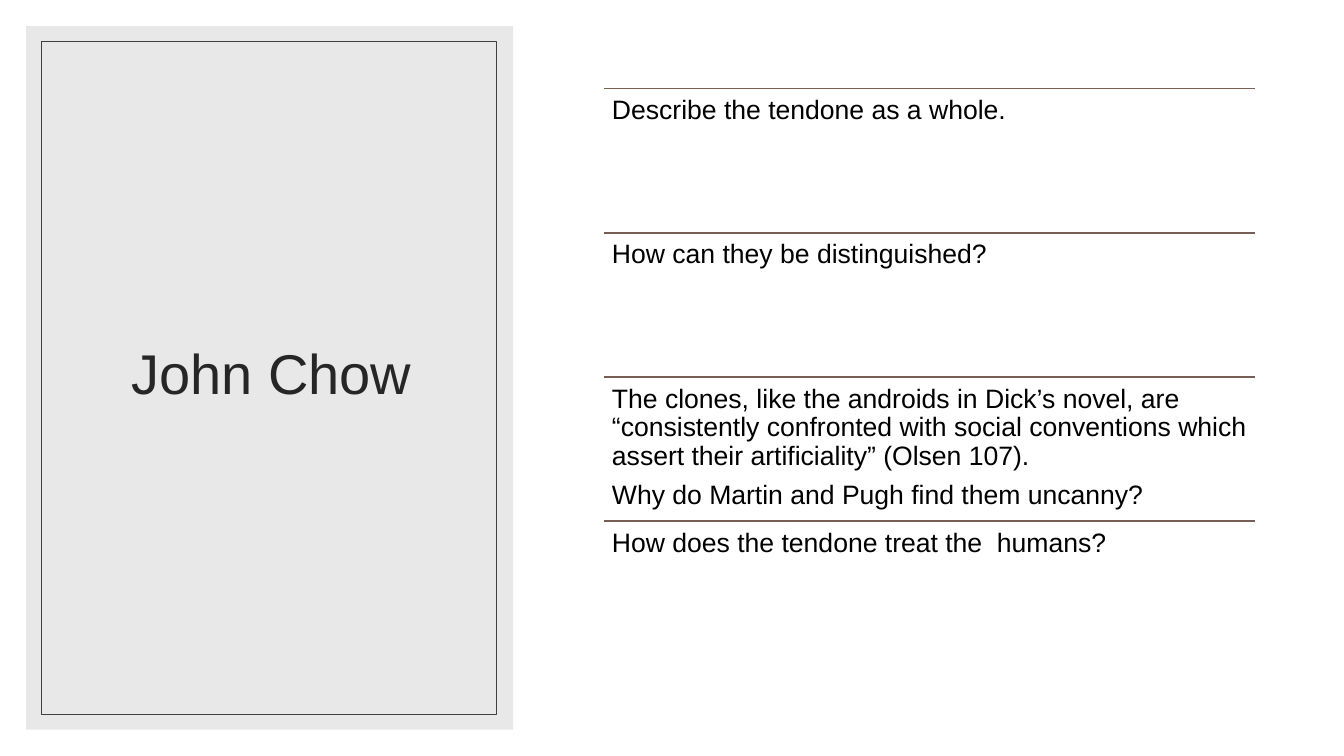
from dataclasses import dataclass

from lxml import etree
from pptx import Presentation
from pptx import util as u
from pptx.dml.color import RGBColor
from pptx.enum import shapes, text
from pptx.oxml import ns

PX = 9144  # EMU per px, 100 px to the inch
FONT = "Arial"
COLORS = {
    "background": "FFFFFF",
    "panel": "D9D9D9",
    "frame": "404040",
    "title": "262626",
    "rule": "775F55",
    "body": "000000",
}


@dataclass
class Box:
    left: int
    top: int
    width: int
    height: int

    def emu(self) -> tuple[int, ...]:
        return tuple(v * PX for v in (self.left, self.top, self.width, self.height))


PANEL = Box(26, 26, 483, 698)
FRAME = Box(41, 41, 451, 668)
TITLE = Box(63, 61, 412, 624)
FIRST_QUESTION = Box(599, 88, 646, 143)
INSET = 8

QUESTIONS = [
    ["Describe the tendone as a whole."],
    ["How can they be distinguished?"],
    [
        "The clones, like the androids in Dick’s novel, are “consistently confronted "
        "with social conventions which assert their artificiality” (Olsen 107).",
        "Why do Martin and Pugh find them uncanny?",
    ],
    ["How does the tendone treat the  humans?"],
]


def color(name: str) -> RGBColor:
    return RGBColor.from_string(COLORS[name])


def add_rect(s, box: Box):
    sp = s.shapes.add_shape(shapes.MSO_SHAPE.RECTANGLE, *box.emu())
    sp.shadow.inherit = False
    return sp


def format_paragraph(p, size: int, color_name: str) -> None:
    p.line_spacing = 0.9
    for r in p.runs:
        r.font.name = FONT
        r.font.size = u.Pt(size)
        r.font.color.rgb = color(color_name)


def add_panel(s):
    sp = add_rect(s, PANEL)
    sp.fill.solid()
    sp.fill.fore_color.rgb = color("panel")
    sp.line.fill.background()
    fill_color = sp.element.spPr.find(ns.qn("a:solidFill"))[0]
    etree.SubElement(fill_color, ns.qn("a:alpha"), val="60000")
    return sp


def add_frame(s) -> None:
    sp = add_rect(s, FRAME)
    sp.fill.background()
    sp.line.color.rgb = color("frame")
    sp.line.width = u.Pt(0.5)


def set_title(s, words: str):
    sp = s.shapes.title
    sp.left, sp.top, sp.width, sp.height = TITLE.emu()
    tf = sp.text_frame
    tf.text = words
    tf.word_wrap = True
    tf.auto_size = text.MSO_AUTO_SIZE.NONE
    tf.vertical_anchor = text.MSO_ANCHOR.MIDDLE
    p = tf.paragraphs[0]
    p.alignment = text.PP_ALIGN.CENTER
    format_paragraph(p, 40, "title")
    return sp


def add_rule(s, box: Box) -> None:
    left, top, width, _ = box.emu()
    line = s.shapes.add_connector(
        shapes.MSO_CONNECTOR.STRAIGHT, left, top, left + width, top
    )
    line.line.color.rgb = color("rule")
    line.line.width = u.Pt(1)
    etree.SubElement(line.element.spPr, ns.qn("a:effectLst"))


def add_question(s, box: Box, paragraphs: list[str]) -> None:
    add_rule(s, box)
    tf = s.shapes.add_textbox(*box.emu()).text_frame
    tf.word_wrap = True
    tf.margin_left = tf.margin_top = tf.margin_right = tf.margin_bottom = INSET * PX
    tf.text = "\n".join(paragraphs)
    for p in tf.paragraphs:
        p.space_after = u.Pt(7.5)
        format_paragraph(p, 19, "body")


def main() -> None:
    prs = Presentation()
    prs.slide_width, prs.slide_height = 1333 * PX, 750 * PX
    s = prs.slides.add_slide(prs.slide_layouts[5])
    s.background.fill.solid()
    s.background.fill.fore_color.rgb = color("background")

    # Left panel, placed behind the title
    title = set_title(s, "John Chow")
    title.element.addprevious(add_panel(s).element)
    add_frame(s)

    # Ruled list of questions
    first = FIRST_QUESTION
    for i, paragraphs in enumerate(QUESTIONS):
        box = Box(first.left, first.top + i * first.height, first.width, first.height)
        add_question(s, box, paragraphs)

    prs.save("out.pptx")


if __name__ == "__main__":
    main()
